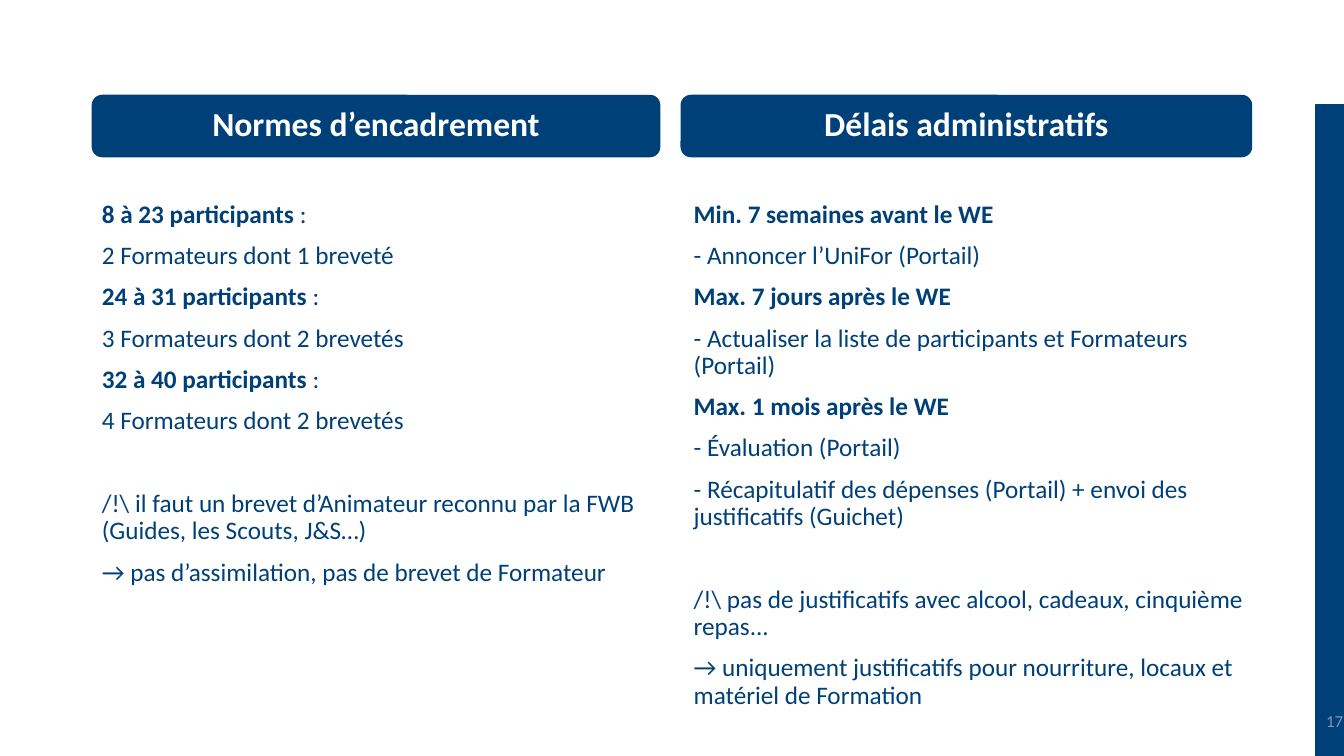
"""Build the slide on supervision norms and administrative deadlines."""
from dataclasses import dataclass

from lxml.etree import SubElement
from pptx import Presentation
from pptx.dml.color import RGBColor
from pptx.enum.shapes import MSO_SHAPE
from pptx.enum.text import MSO_ANCHOR, MSO_AUTO_SIZE, PP_ALIGN
from pptx.oxml.ns import qn
from pptx.shapes.autoshape import Shape
from pptx.slide import Slide
from pptx.util import Inches, Pt


@dataclass(frozen=True)
class Theme:
    font: str = "Calibri"
    navy: RGBColor = RGBColor(0x00, 0x40, 0x79)
    white: RGBColor = RGBColor(0xFF, 0xFF, 0xFF)
    grey: RGBColor = RGBColor(0x8C, 0x93, 0xA8)
    heading_size: int = 24
    body_size: int = 18
    number_size: int = 12
    line_spacing: float = 0.9
    paragraph_gap: int = 10
    section_gap: int = 40


@dataclass(frozen=True)
class Box:
    left: float
    top: float
    width: float
    height: float

    def lengths(self) -> tuple[int, int, int, int]:
        return (Inches(self.left), Inches(self.top),
                Inches(self.width), Inches(self.height))


@dataclass(frozen=True)
class Line:
    bold: str = ""
    plain: str = ""
    opens_section: bool = False


@dataclass(frozen=True)
class Column:
    heading: str
    heading_left: float
    body_left: float
    width: float
    lines: tuple[Line, ...]


THEME = Theme()
SLIDE_WIDTH, SLIDE_HEIGHT = 13.33, 7.5
HEADING_TOP, HEADING_HEIGHT = 0.94, 0.62
BODY_TOP, BODY_HEIGHT = 1.95, 3.6
SIDE_BAR = Box(13.05, 1.04, SLIDE_WIDTH - 13.05, SLIDE_HEIGHT - 1.04)
NUMBER_BOX = Box(10.42, 6.95, 3, 0.4)

COLUMNS = (
    Column("Normes d’encadrement", 0.91, 0.91, 5.64, (
        Line("8 à 23 participants ", ":"),
        Line(plain="2 Formateurs dont 1 breveté"),
        Line("24 à 31 participants ", ":"),
        Line(plain="3 Formateurs dont 2 brevetés"),
        Line("32 à 40 participants ", ":"),
        Line(plain="4 Formateurs dont 2 brevetés"),
        Line(plain="/!\\ il faut un brevet d’Animateur reconnu par la FWB "
                   "(Guides, les Scouts, J&S…)", opens_section=True),
        Line(plain="→ pas d’assimilation, pas de brevet de Formateur"),
    )),
    Column("Délais administratifs", 6.75, 6.78, 5.67, (
        Line("Min. 7 semaines avant le WE"),
        Line(plain="- Annoncer l’UniFor (Portail)"),
        Line("Max. 7 jours après le WE"),
        Line(plain="- Actualiser la liste de participants et Formateurs (Portail)"),
        Line("Max. 1 mois après le WE"),
        Line(plain="- Évaluation (Portail)"),
        Line(plain="- Récapitulatif des dépenses (Portail) + envoi des "
                   "justificatifs (Guichet)"),
        Line(plain="/!\\ pas de justificatifs avec alcool, cadeaux, cinquième "
                   "repas...", opens_section=True),
        Line(plain="→ uniquement justificatifs pour nourriture, locaux et "
                   "matériel de Formation"),
    )),
)


def add_run(paragraph, text: str, size: int, color: RGBColor, bold: bool = False) -> None:
    """Append one formatted run."""
    run = paragraph.add_run()
    run.text = text
    run.font.name = THEME.font
    run.font.size = Pt(size)
    run.font.bold = bold
    run.font.color.rgb = color


def add_block(slide: Slide, kind: MSO_SHAPE, box: Box) -> Shape:
    """Draw a flat navy shape."""
    shape = slide.shapes.add_shape(kind, *box.lengths())
    shape.shadow.inherit = False
    shape.fill.solid()
    shape.fill.fore_color.rgb = THEME.navy
    shape.line.fill.background()
    return shape


def add_heading(slide: Slide, column: Column) -> None:
    """Draw a column's rounded heading."""
    box = Box(column.heading_left, HEADING_TOP, column.width, HEADING_HEIGHT)
    frame = add_block(slide, MSO_SHAPE.ROUNDED_RECTANGLE, box).text_frame
    frame.vertical_anchor = MSO_ANCHOR.MIDDLE
    paragraph = frame.paragraphs[0]
    paragraph.alignment = PP_ALIGN.CENTER
    paragraph.line_spacing = THEME.line_spacing
    add_run(paragraph, column.heading, THEME.heading_size, THEME.white, bold=True)


def fill_body(placeholder, column: Column) -> None:
    """Place a body placeholder and write the column's lines in it."""
    box = Box(column.body_left, BODY_TOP, column.width, BODY_HEIGHT)
    (placeholder.left, placeholder.top,
     placeholder.width, placeholder.height) = box.lengths()
    frame = placeholder.text_frame
    frame.word_wrap = True
    frame.auto_size = MSO_AUTO_SIZE.NONE
    frame.vertical_anchor = MSO_ANCHOR.TOP
    for index, line in enumerate(column.lines):
        paragraph = frame.add_paragraph() if index else frame.paragraphs[0]
        gap = THEME.section_gap if line.opens_section else THEME.paragraph_gap
        paragraph.line_spacing = THEME.line_spacing
        paragraph.space_before = Pt(gap if index else 0)
        properties = paragraph._p.get_or_add_pPr()
        properties.set("marL", "0")
        properties.set("indent", "0")
        SubElement(properties, qn("a:buNone"))
        for text, bold in ((line.bold, True), (line.plain, False)):
            if text:
                add_run(paragraph, text, THEME.body_size, THEME.navy, bold)


def add_slide_number(slide: Slide, number: str) -> None:
    """Write the slide number at the lower right."""
    frame = slide.shapes.add_textbox(*NUMBER_BOX.lengths()).text_frame
    frame.word_wrap = True
    frame.vertical_anchor = MSO_ANCHOR.MIDDLE
    paragraph = frame.paragraphs[0]
    paragraph.alignment = PP_ALIGN.RIGHT
    add_run(paragraph, number, THEME.number_size, THEME.grey)


def main() -> None:
    """Build and save the presentation."""
    presentation = Presentation()
    presentation.slide_width = Inches(SLIDE_WIDTH)
    presentation.slide_height = Inches(SLIDE_HEIGHT)
    slide = presentation.slides.add_slide(presentation.slide_layouts.get_by_name("Two Content"))
    title, *bodies = slide.placeholders
    title.element.getparent().remove(title.element)
    side_bar = add_block(slide, MSO_SHAPE.RECTANGLE, SIDE_BAR)
    side_bar.line.color.rgb = THEME.navy
    side_bar.line.width = Pt(1)
    for column, body in zip(COLUMNS, bodies):
        add_heading(slide, column)
        fill_body(body, column)
    add_slide_number(slide, "17")
    presentation.save("out.pptx")


if __name__ == "__main__":
    main()
